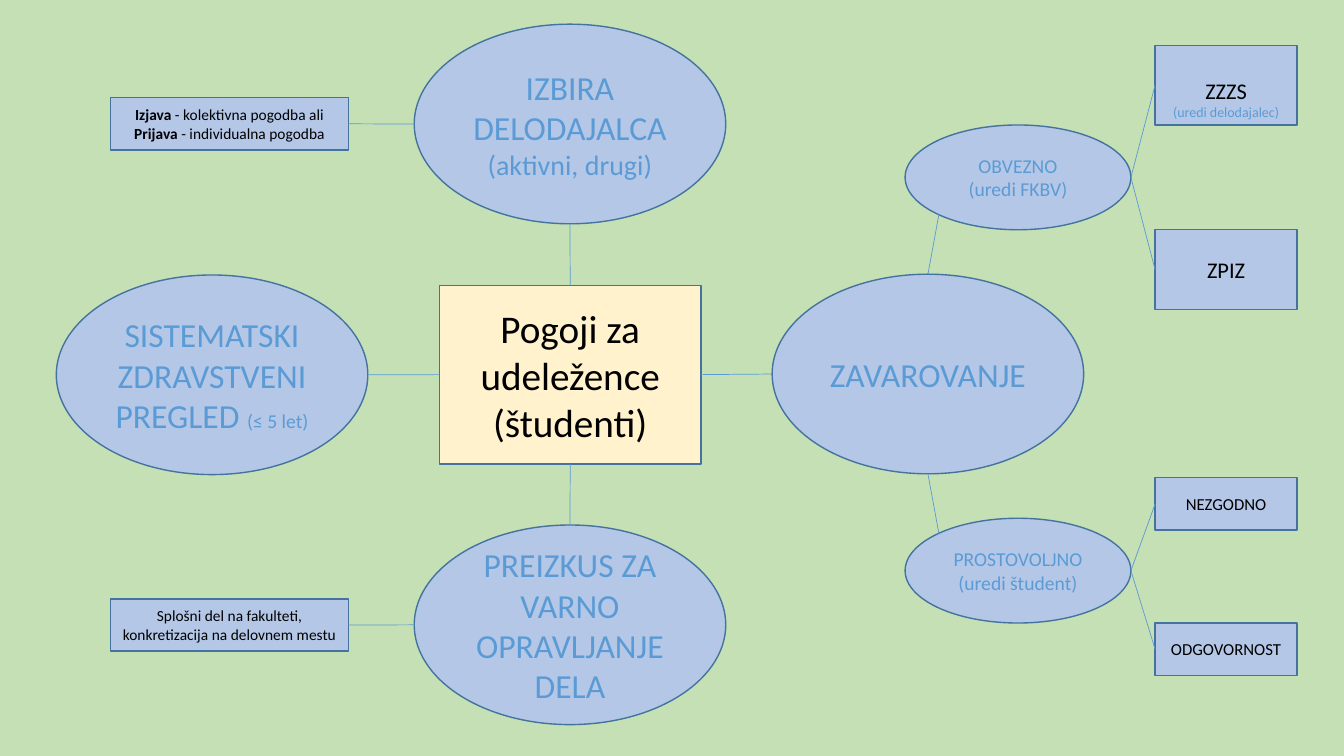
from dataclasses import dataclass
from enum import Enum

import pptx
import pptx.dml.color
import pptx.enum.shapes
import pptx.enum.text
import pptx.oxml.ns
import pptx.util
from lxml import etree
from pptx.util import Cm

GREEN, CREAM, PALE_BLUE = "C5E0B4", "FFF2CC", "B4C7E7"
OUTLINE, BLUE, BLACK = "43739E", "5B9BD5", "000000"
RECTANGLE = pptx.enum.shapes.MSO_SHAPE.RECTANGLE
ELLIPSE = pptx.enum.shapes.MSO_SHAPE.OVAL


class Side(Enum):
    """Connection points as fractions of a node's width and height."""
    TOP = (0.5, 0)
    BOTTOM = (0.5, 1)
    LEFT = (0, 0.5)
    RIGHT = (1, 0.5)
    TOP_LEFT = (0.15, 0.15)
    BOTTOM_LEFT = (0.15, 0.85)


@dataclass(frozen=True)
class Run:
    text: str
    size: float
    color: str = BLUE
    bold: bool = False


@dataclass(frozen=True)
class Kind:
    """Outline and size in centimetres shared by similar nodes."""
    preset: pptx.enum.shapes.MSO_SHAPE
    width: float
    height: float
    fill: str = PALE_BLUE


@dataclass(frozen=True)
class Node:
    kind: Kind
    left: float
    top: float
    paragraphs: tuple[tuple[Run, ...], ...]
    first_spacing: float = 1.0

    def point(self, side: Side) -> tuple[int, int]:
        across, down = side.value
        return (Cm(self.left + across * self.kind.width),
                Cm(self.top + down * self.kind.height))


CENTER = Kind(RECTANGLE, 6.6, 4.5, CREAM)
TOPIC = Kind(ELLIPSE, 7.85, 5.03)
BRANCH = Kind(ELLIPSE, 5.69, 2.64)
INSTITUTE = Kind(RECTANGLE, 3.58, 2.01)
POLICY = Kind(RECTANGLE, 3.58, 1.32)
NOTE = Kind(RECTANGLE, 5.99, 1.32)

TOPIC_LEFT, BRANCH_LEFT, LEAF_LEFT, NOTE_LEFT = 10.44, 22.81, 29.11, 2.79

NODES = {
    "conditions": Node(CENTER, 11.07, 7.19, (
        (Run("Pogoji za udeležence", 28, BLACK),), (Run("(študenti)", 28, BLACK),))),
    "examination": Node(TOPIC, 1.42, 6.93, (
        (Run("SISTEMATSKI ZDRAVSTVENI PREGLED ", 24), Run("(≤ 5 let)", 14)),)),
    "insurance": Node(TOPIC, 19.46, 6.91, ((Run("ZAVAROVANJE", 24),),)),
    "employer": Node(TOPIC, TOPIC_LEFT, 0.61, (
        (Run("IZBIRA DELODAJALCA", 24),), (Run("(aktivni, drugi)", 20),))),
    "safety": Node(TOPIC, TOPIC_LEFT, 13.23, (
        (Run("PREIZKUS ZA VARNO OPRAVLJANJE DELA", 24),),)),
    "compulsory": Node(BRANCH, BRANCH_LEFT, 3.15, (
        (Run("OBVEZNO", 14),), (Run("(uredi FKBV)", 14),))),
    "voluntary": Node(BRANCH, BRANCH_LEFT, 13.06, (
        (Run("PROSTOVOLJNO", 14),), (Run("(uredi študent)", 14),))),
    "health": Node(INSTITUTE, LEAF_LEFT, 1.14, (
        (Run("ZZZS", 16, BLACK),), (Run("(uredi delodajalec)", 10),)), first_spacing=2.0),
    "pension": Node(INSTITUTE, LEAF_LEFT, 5.79, ((Run("ZPIZ", 16, BLACK),),)),
    "accident": Node(POLICY, LEAF_LEFT, 12.04, ((Run("NEZGODNO", 12, BLACK),),)),
    "liability": Node(POLICY, LEAF_LEFT, 15.7, ((Run("ODGOVORNOST", 12, BLACK),),)),
    "contract": Node(NOTE, NOTE_LEFT, 2.46, (
        (Run("Izjava", 11, BLACK, True), Run(" - kolektivna pogodba ali ", 11, BLACK),
         Run("Prijava", 11, BLACK, True), Run(" - individualna pogodba", 11, BLACK)),)),
    "training": Node(NOTE, NOTE_LEFT, 15.09, (
        (Run("Splošni del na fakulteti, konkretizacija na delovnem mestu", 11, BLACK),),)),
}

LINKS = (
    ("conditions", Side.TOP, "employer", Side.BOTTOM),
    ("conditions", Side.BOTTOM, "safety", Side.TOP),
    ("conditions", Side.LEFT, "examination", Side.RIGHT),
    ("conditions", Side.RIGHT, "insurance", Side.LEFT),
    ("insurance", Side.TOP, "compulsory", Side.BOTTOM_LEFT),
    ("insurance", Side.BOTTOM, "voluntary", Side.TOP_LEFT),
    ("compulsory", Side.RIGHT, "health", Side.LEFT),
    ("compulsory", Side.RIGHT, "pension", Side.LEFT),
    ("voluntary", Side.RIGHT, "accident", Side.LEFT),
    ("voluntary", Side.RIGHT, "liability", Side.LEFT),
    ("contract", Side.RIGHT, "employer", Side.LEFT),
    ("training", Side.RIGHT, "safety", Side.LEFT),
)


def rgb(color: str) -> pptx.dml.color.RGBColor:
    return pptx.dml.color.RGBColor.from_string(color)


def add_text(paragraph, text: str, *, size: float, color: str, bold: bool = False) -> None:
    run = paragraph.add_run()
    run.text = text
    run.font.name = "Calibri"
    run.font.size = pptx.util.Pt(size)
    run.font.color.rgb = rgb(color)
    run.font.bold = bold


def add_node(slide, node: Node) -> None:
    kind = node.kind
    shape = slide.shapes.add_shape(kind.preset, Cm(node.left), Cm(node.top),
                                   Cm(kind.width), Cm(kind.height))
    shape.shadow.inherit = False
    shape.fill.solid()
    shape.fill.fore_color.rgb = rgb(kind.fill)
    shape.line.color.rgb = rgb(OUTLINE)
    shape.line.width = pptx.util.Pt(1)
    frame = shape.text_frame
    frame.word_wrap = True
    frame.vertical_anchor = pptx.enum.text.MSO_ANCHOR.MIDDLE
    for index, runs in enumerate(node.paragraphs):
        paragraph = frame.add_paragraph() if index else frame.paragraphs[0]
        paragraph.alignment = pptx.enum.text.PP_ALIGN.CENTER
        paragraph.line_spacing = 1.0 if index else node.first_spacing
        for run in runs:
            add_text(paragraph, run.text, size=run.size, color=run.color, bold=run.bold)


def add_link(slide, start: tuple[int, int], end: tuple[int, int]) -> None:
    connector = slide.shapes.add_connector(
        pptx.enum.shapes.MSO_CONNECTOR.STRAIGHT, *start, *end)
    connector.line.color.rgb = rgb(BLUE)
    connector.line.width = pptx.util.Pt(0.5)
    etree.SubElement(connector._element.spPr, pptx.oxml.ns.qn("a:effectLst"))


def main() -> None:
    presentation = pptx.Presentation()
    presentation.slide_width, presentation.slide_height = Cm(33.87), Cm(19.05)
    blank_layout = presentation.slide_layouts[6]
    slide = presentation.slides.add_slide(blank_layout)
    slide.background.fill.solid()
    slide.background.fill.fore_color.rgb = rgb(GREEN)
    for node in NODES.values():
        add_node(slide, node)
    for start, start_side, end, end_side in LINKS:
        add_link(slide, NODES[start].point(start_side), NODES[end].point(end_side))
    presentation.save("out.pptx")


if __name__ == "__main__":
    main()
